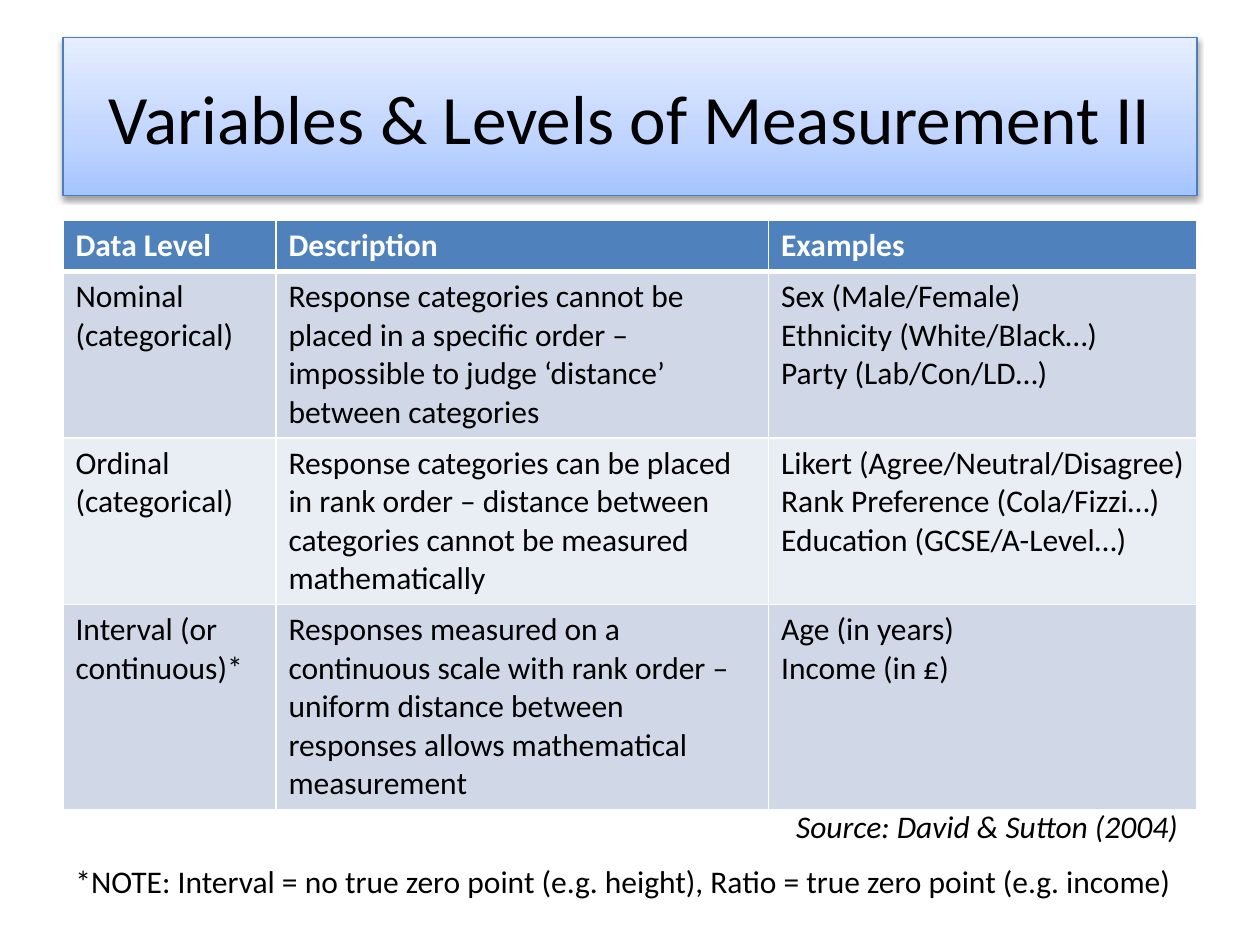
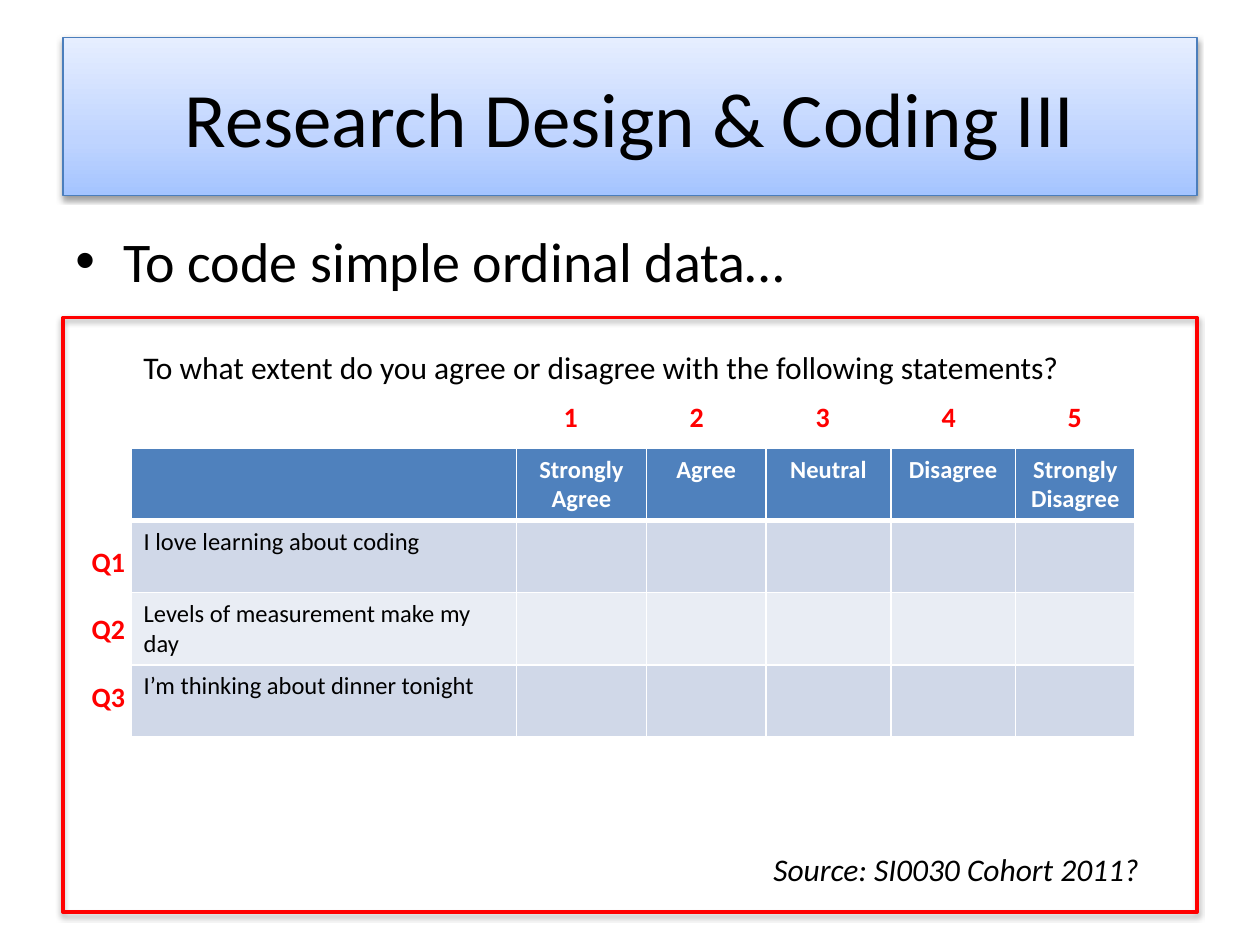
from lxml import etree
from pptx import Presentation
from pptx.dml.color import RGBColor
from pptx.enum.shapes import MSO_SHAPE
from pptx.enum.text import MSO_ANCHOR, MSO_AUTO_SIZE, PP_ALIGN
from pptx.oxml.ns import qn
from pptx.util import Inches, Pt

RECTANGLE = MSO_SHAPE.RECTANGLE
LEFT, CENTER, RIGHT = PP_ALIGN.LEFT, PP_ALIGN.CENTER, PP_ALIGN.RIGHT
MIDDLE = MSO_ANCHOR.MIDDLE
GROW, FIXED = MSO_AUTO_SIZE.SHAPE_TO_FIT_TEXT, MSO_AUTO_SIZE.NONE
TITLE_ONLY = 5

FONT = "Calibri"
BLACK, WHITE, RED = "000000", "FFFFFF", "FF0000"
HEADER_FILL = "4F81BD"
BAND_FILLS = ("D0D8E8", "E9EDF4")
TITLE_LINE = "4B7EBC"
TITLE_STOPS = ((0, "A4C4FF"), (35, "BFD4FF"), (100, "E6EEFF"))
TITLE_BOX = (0.5, 0.3, 9, 1.25)


def color(hex_value):
    return RGBColor.from_string(hex_value)


def add_element(parent, tag, **attributes):
    element = etree.SubElement(parent, qn(tag))
    for name, value in attributes.items():
        element.set(name, str(value))
    return element


def write_paragraphs(text_frame, lines, align=LEFT, space_before=0, hex_color=BLACK, **font_format):
    """Write one paragraph per line; the space goes between paragraphs."""
    for index, line in enumerate(lines):
        paragraph = text_frame.paragraphs[0] if index == 0 else text_frame.add_paragraph()
        paragraph.alignment = align
        if index and space_before:
            paragraph.space_before = Pt(space_before)
        run = paragraph.add_run()
        run.text = line
        run.font.name = FONT
        run.font.color.rgb = color(hex_color)
        for name, value in font_format.items():
            setattr(run.font, name, value)


def add_text(slide, box, *lines, **text_format):
    shape = slide.shapes.add_textbox(*map(Inches, box))
    shape.text_frame.word_wrap = True
    shape.text_frame.auto_size = GROW
    write_paragraphs(shape.text_frame, lines, **text_format)
    return shape


def add_bullet(slide, box, text):
    shape = add_text(slide, box, text, size=Pt(32))
    shape.text_frame.auto_size = FIXED
    indent = Inches(0.38)
    properties = shape.text_frame.paragraphs[0]._p.get_or_add_pPr()
    properties.set("marL", str(indent))
    properties.set("indent", str(-indent))
    add_element(add_element(properties, "a:spcBef"), "a:spcPct", val=20000)
    add_element(properties, "a:buFont", typeface="Arial")
    add_element(properties, "a:buChar", char="•")


def add_shadow(shape, opacity, distance):
    shape.shadow.inherit = False
    effects = shape._element.spPr.find(qn("a:effectLst"))
    shadow = add_element(effects, "a:outerShdw", blurRad=Pt(3.1), dist=Pt(distance),
                         dir=90 * 60000, rotWithShape=0)
    shade = add_element(shadow, "a:srgbClr", val=BLACK)
    add_element(shade, "a:alpha", val=opacity * 1000)


def set_outline(shape, hex_color, width):
    shape.line.color.rgb = color(hex_color)
    shape.line.width = Pt(width)


def add_titled_slide(presentation, text, size):
    slide = presentation.slides.add_slide(presentation.slide_layouts[TITLE_ONLY])
    title = slide.shapes.title
    title.left, title.top, title.width, title.height = map(Inches, TITLE_BOX)
    title.fill.gradient()
    title.fill.gradient_angle = 90
    stops = title._element.spPr.find(".//" + qn("a:gsLst"))
    for stop in list(stops):
        stops.remove(stop)
    for position, hex_color in TITLE_STOPS:
        stop = add_element(stops, "a:gs", pos=position * 1000)
        add_element(stop, "a:srgbClr", val=hex_color)
    set_outline(title, TITLE_LINE, 0.75)
    add_shadow(title, opacity=38, distance=1.6)
    title.text_frame.vertical_anchor = MIDDLE
    title.text_frame.auto_size = FIXED
    write_paragraphs(title.text_frame, [text], align=CENTER, size=Pt(size))
    return slide


def set_borders(cell, bottom_width):
    properties = cell._tc.get_or_add_tcPr()
    for side, width in (("L", 1), ("R", 1), ("T", 1), ("B", bottom_width)):
        line = add_element(properties, f"a:ln{side}", w=Pt(width))
        add_element(add_element(line, "a:solidFill"), "a:srgbClr", val=WHITE)


def add_banded_table(slide, left, top, widths, heights, rows, size, header_align=LEFT):
    """Add a table with a header row; line breaks in a cell part its paragraphs."""
    frame = slide.shapes.add_table(len(rows), len(widths), Inches(left), Inches(top),
                                   Inches(sum(widths)), Inches(sum(heights)))
    table = frame.table
    for column, width in zip(table.columns, widths):
        column.width = Inches(width)
    for row_index, (height, texts) in enumerate(zip(heights, rows)):
        table.rows[row_index].height = Inches(height)
        is_header = row_index == 0
        fill = HEADER_FILL if is_header else BAND_FILLS[(row_index - 1) % 2]
        for column_index, text in enumerate(texts):
            cell = table.cell(row_index, column_index)
            # The header has a heavy lower rule that the next row's top edge shares.
            set_borders(cell, bottom_width=3 if is_header else 1)
            cell.fill.solid()
            cell.fill.fore_color.rgb = color(fill)
            if text:
                write_paragraphs(cell.text_frame, text.split("\n"),
                                 align=header_align if is_header else LEFT,
                                 hex_color=WHITE if is_header else BLACK,
                                 size=Pt(size), bold=is_header)


def build_measurement_slide(presentation):
    slide = add_titled_slide(presentation, "Variables & Levels of Measurement II", 39.6)
    rows = [
        ("Data Level", "Description", "Examples"),
        ("Nominal (categorical)",
         "Response categories cannot be placed in a specific order – impossible to judge "
         "‘distance’ between categories",
         "Sex (Male/Female)\nEthnicity (White/Black…)\nParty (Lab/Con/LD…)"),
        ("Ordinal (categorical)",
         "Response categories can be placed in rank order – distance between categories "
         "cannot be measured mathematically",
         "Likert (Agree/Neutral/Disagree)\nRank Preference (Cola/Fizzi…)\n"
         "Education (GCSE/A-Level…)"),
        ("Interval (or continuous)*",
         "Responses measured on a continuous scale with rank order – uniform distance "
         "between responses allows mathematical measurement",
         "Age (in years)\nIncome (in £)"),
    ]
    add_banded_table(slide, 0.5, 1.75, (1.69, 3.91, 3.4), (0.4, 1.3, 1.3, 1.61), rows, 18)
    add_text(slide, (0.5, 6.79, 9, 0.4),
             "*NOTE: Interval = no true zero point (e.g. height), "
             "Ratio = true zero point (e.g. income)", size=Pt(18))
    add_text(slide, (6.22, 6.36, 3.28, 0.4), "Source: David & Sutton (2004)",
             size=Pt(18), italic=True)


def add_questionnaire(slide, left, top, width, height):
    """Draw the framed survey form with its answer and question codes."""
    frame = slide.shapes.add_shape(RECTANGLE, *map(Inches, (left, top, width, height)))
    frame.fill.background()
    set_outline(frame, RED, 2)
    add_shadow(frame, opacity=35, distance=1.8)

    answers = ("Strongly Agree", "Agree", "Neutral", "Disagree", "Strongly Disagree")
    questions = ("I love learning about coding", "Levels of measurement make my day",
                 "I’m thinking about dinner tonight")
    blanks = ("",) * len(answers)
    rows = [("", *answers)] + [(question, *blanks) for question in questions]
    add_banded_table(slide, left + 0.54, top + 1.04, (3.06, 1.03, 0.95, 0.99, 0.99, 0.95),
                     (0.57,) * len(rows), rows, 14, header_align=CENTER)

    add_text(slide, (left + 0.54, top + 0.19, 7.96, 0.4),
             "To what extent do you agree or disagree with the following statements?",
             size=Pt(18))
    add_text(slide, (left + 5.5, top + 4.18, 3.14, 0.4), "Source: SI0030 Cohort 2011?",
             align=RIGHT, size=Pt(18), italic=True)

    code_format = {"hex_color": RED, "size": Pt(16), "bold": True}
    question_codes = [f"Q{number}" for number in range(1, len(questions) + 1)]
    add_text(slide, (left + 0.13, top + 1.75, 0.54, 1.45), *question_codes,
             space_before=19.5, **code_format)
    for index in range(len(answers)):
        add_text(slide, (left + 3.53 + index, top + 0.6, 1, 0.37), str(index + 1),
                 align=CENTER, **code_format)


def build_coding_slide(presentation):
    slide = add_titled_slide(presentation, "Research Design & Coding III", 44)
    add_bullet(slide, (0.5, 1.75, 9, 4.95), "To code simple ordinal data…")
    add_questionnaire(slide, 0.5, 2.52, 9, 4.72)


def main():
    presentation = Presentation()
    presentation.slide_width, presentation.slide_height = Inches(10), Inches(7.5)
    build_measurement_slide(presentation)
    build_coding_slide(presentation)
    presentation.save("out.pptx")


if __name__ == "__main__":
    main()
